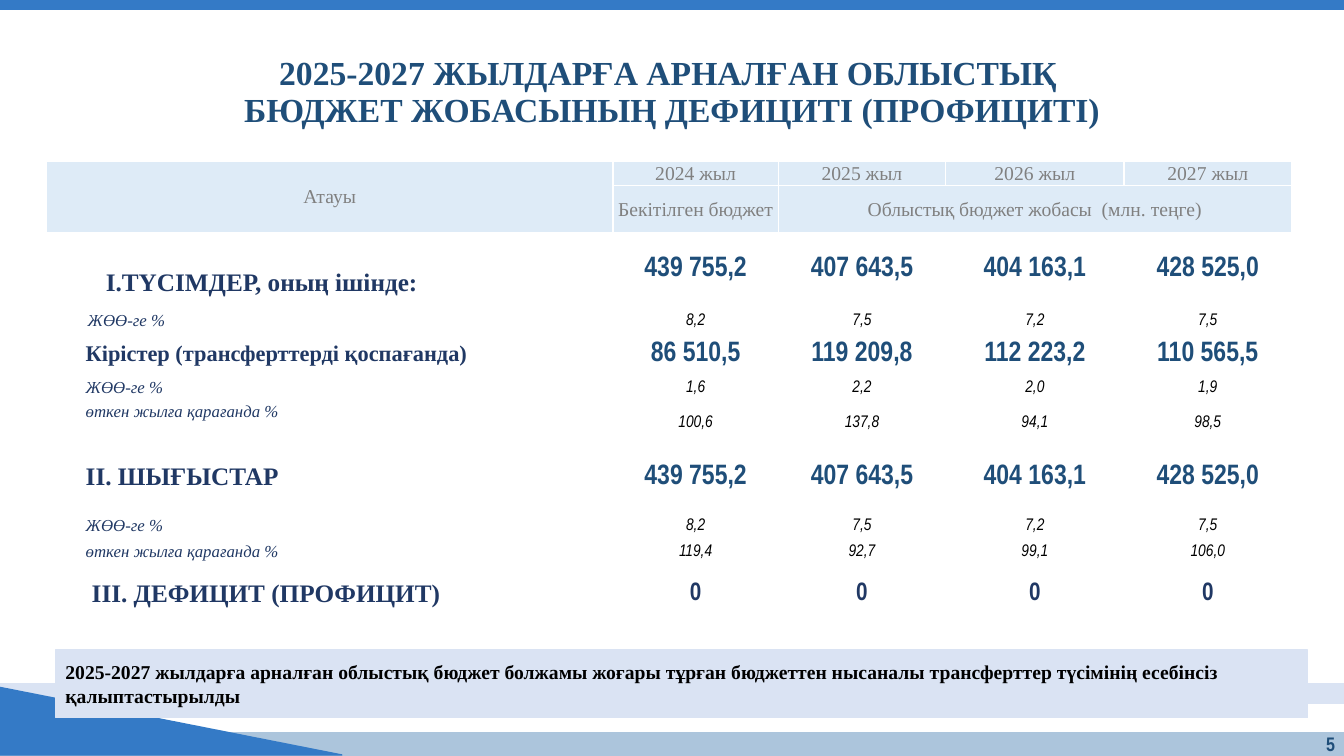
from lxml import etree
from pptx import Presentation
from pptx import util as u
from pptx.dml.color import RGBColor
from pptx.enum import shapes, text
from pptx.oxml import ns

SERIF = "Times New Roman"
NARROW = "Arial Narrow"
BLUE = "347AC6"
PALE = "DAE3F3"
HEADER = "DEEBF7"
NAVY = "203864"
TEAL = "1F4E79"
BLACK = "000000"
LEFT = text.PP_ALIGN.LEFT
CENTER = text.PP_ALIGN.CENTER
RIGHT = text.PP_ALIGN.RIGHT
MIDDLE = text.MSO_ANCHOR.MIDDLE

YEARS = ["2024 жыл", "2025 жыл", "2026 жыл", "2027 жыл"]
COLUMN_WIDTHS = [5.62, 1.64, 1.66, 1.77, 1.66]
ROW_HEIGHTS = [0.23, 0.46, 0.73, 0.29, 0.38, 0.29, 0.39, 0.7, 0.26, 0.26, 0.58, 0.21]

LABEL_STYLES = {
    "section": (18, SERIF, NAVY, True, False),
    "income": (16, SERIF, NAVY, True, False),
    "share": (12, SERIF, NAVY, False, True),
    "balance": (18, SERIF, NAVY, True, False),
}
VALUE_STYLES = {
    "section": (20, NARROW, TEAL, True, False),
    "income": (20, NARROW, TEAL, True, False),
    "share": (12, NARROW, BLACK, False, True),
    "balance": (18, NARROW, NAVY, True, False),
}
TOTALS = ["439 755,2", "407 643,5", "404 163,1", "428 525,0"]
TOTAL_SHARES = ["8,2", "7,5", "7,2", "7,5"]
BUDGET_ROWS = [
    ("section", 0.39, "ТҮСІМДЕР, оның ішінде:", TOTALS),
    ("share", 0.41, "ЖӨӨ-ге %", TOTAL_SHARES),
    ("income", 0.39, "Кірістер (трансферттерді қоспағанда)",
     ["86 510,5", "119 209,8", "112 223,2", "110 565,5"]),
    ("share", 0.39, "ЖӨӨ-ге %", ["1,6", "2,2", "2,0", "1,9"]),
    ("share", 0.39, "өткен жылға қарағанда %", ["100,6", "137,8", "94,1", "98,5"]),
    ("section", 0.39, "II. ШЫҒЫСТАР", TOTALS),
    ("share", 0.39, "ЖӨӨ-ге %", TOTAL_SHARES),
    ("share", 0.39, "өткен жылға қарағанда %", ["119,4", "92,7", "99,1", "106,0"]),
    ("balance", 0.45, "III. ДЕФИЦИТ (ПРОФИЦИТ)", ["0"] * 4),
]


def color(code):
    return RGBColor.from_string(code)


def write(frame, words, style, align, spacing=None):
    size, font, ink, bold, italic = style
    para = frame.paragraphs[0]
    para.text = words
    para.alignment = align
    para.line_spacing = spacing
    for span in para.runs:
        span.font.size = u.Pt(size)
        span.font.name = font
        span.font.color.rgb = color(ink)
        span.font.bold = bold
        span.font.italic = italic
    return para


def add_block(page, kind, box, fill):
    block = page.shapes.add_shape(kind, *map(u.Inches, box))
    block.shadow.inherit = False
    block.fill.solid()
    block.fill.fore_color.rgb = color(fill)
    block.line.color.rgb = color(fill)
    block.line.width = u.Pt(1)
    return block


def add_label(page, box, words, style, align):
    label = page.shapes.add_textbox(*map(u.Inches, box))
    frame = label.text_frame
    frame.word_wrap = True
    frame.vertical_anchor = MIDDLE
    write(frame, words, style, align, 0.9)


def add_background(page, width, height):
    rectangle = shapes.MSO_SHAPE.RECTANGLE
    add_block(page, rectangle, (0, height - 0.23, width, 0.23), "ACC5DC")
    add_block(page, rectangle, (0, height - 0.72, width, 0.2), PALE)
    add_block(page, shapes.MSO_SHAPE.RIGHT_TRIANGLE, (0, height - 0.68, 3.39, 0.67), BLUE)
    add_block(page, rectangle, (0, -0.01, width, 0.1), BLUE)


def add_note(page, box):
    note = add_block(page, shapes.MSO_SHAPE.RECTANGLE, box, PALE)
    frame = note.text_frame
    frame.word_wrap = True
    frame.vertical_anchor = MIDDLE
    words = ("2025-2027 жылдарға арналған облыстық бюджет болжамы жоғары тұрған "
             "бюджеттен нысаналы трансферттер түсімінің есебінсіз қалыптастырылды")
    write(frame, words, (14, SERIF, BLACK, True, False), LEFT)


def set_margins(cell, side):
    cell.margin_left = cell.margin_top = cell.margin_right = u.Inches(side)
    cell.margin_bottom = 0
    cell.vertical_anchor = MIDDLE


def style_header(cell):
    properties = cell._tc.get_or_add_tcPr()
    for edge in ("lnL", "lnR", "lnT", "lnB"):
        line = etree.SubElement(properties, ns.qn("a:" + edge), w=str(u.Pt(1)))
        fill = etree.SubElement(line, ns.qn("a:solidFill"))
        etree.SubElement(fill, ns.qn("a:srgbClr"), val="FFFFFF")
    cell.fill.solid()
    cell.fill.fore_color.rgb = color(HEADER)


def fill_header(table):
    for row in range(2):
        for column in range(5):
            style_header(table.cell(row, column))
            set_margins(table.cell(row, column), 0.01)
    table.cell(0, 0).merge(table.cell(1, 0))
    table.cell(1, 2).merge(table.cell(1, 4))
    headings = [(0, 0, "Атауы"), (1, 1, "Бекітілген бюджет"),
                (1, 2, "Облыстық бюджет жобасы  (млн. теңге)")]
    headings += [(0, column, year) for column, year in enumerate(YEARS, 1)]
    for row, column, words in headings:
        write(table.cell(row, column).text_frame, words,
              (14, SERIF, "808080", False, False), CENTER)


def fill_budget_row(table, row, kind, indent, label, values):
    name = table.cell(row, 0)
    set_margins(name, 0)
    para = write(name.text_frame, label, LABEL_STYLES[kind], LEFT)
    para._p.get_or_add_pPr().set("marL", str(u.Inches(indent)))
    for column, value in enumerate(values, 1):
        cell = table.cell(row, column)
        set_margins(cell, 0.01)
        write(cell.text_frame, value, VALUE_STYLES[kind], CENTER)


def add_budget_table(page, box):
    table = page.shapes.add_table(len(ROW_HEIGHTS), len(COLUMN_WIDTHS),
                                  *map(u.Inches, box)).table
    table.first_row = table.horz_banding = False
    for column, width in zip(table.columns, COLUMN_WIDTHS):
        column.width = u.Inches(width)
    for row, height in zip(table.rows, ROW_HEIGHTS):
        row.height = u.Inches(height)
    for cell in table.iter_cells():
        cell.fill.background()
    fill_header(table)
    for row, entry in enumerate(BUDGET_ROWS, 2):
        fill_budget_row(table, row, *entry)

    receipts = table.cell(2, 0)
    receipts.margin_top = u.Inches(0.28)
    properties = receipts.text_frame.paragraphs[0]._p.get_or_add_pPr()
    properties.set("indent", str(u.Inches(0.2)))
    etree.SubElement(properties, ns.qn("a:buFont"), typeface="+mj-lt")
    etree.SubElement(properties, ns.qn("a:buAutoNum"), type="romanUcPeriod")
    table.cell(6, 0).vertical_anchor = text.MSO_ANCHOR.TOP

    for cell in table.rows[len(ROW_HEIGHTS) - 1].cells:
        set_margins(cell, 0)
        etree.SubElement(cell.text_frame.paragraphs[0]._p, ns.qn("a:endParaRPr"), sz="1000")


def main():
    deck = Presentation()
    width, height = 13.33, 7.5
    deck.slide_width = u.Inches(width)
    deck.slide_height = u.Inches(height)
    page = deck.slides.add_slide(deck.slide_layouts[6])
    add_background(page, width, height)
    add_label(page, (0.22, 0.69, 12.89, 0.47),
              "2025-2027 ЖЫЛДАРҒА АРНАЛҒАН ОБЛЫСТЫҚ \vБЮДЖЕТ ЖОБАСЫНЫҢ ДЕФИЦИТІ (ПРОФИЦИТІ)",
              (24, SERIF, TEAL, True, False), CENTER)
    add_budget_table(page, (0.46, 1.6, sum(COLUMN_WIDTHS), sum(ROW_HEIGHTS)))
    add_label(page, (12.62, 7.26, 0.72, 0.27), "5", (14, NARROW, TEAL, True, False), RIGHT)
    add_note(page, (0.55, 6.45, 12.42, 0.67))
    deck.save("out.pptx")


if __name__ == "__main__":
    main()
